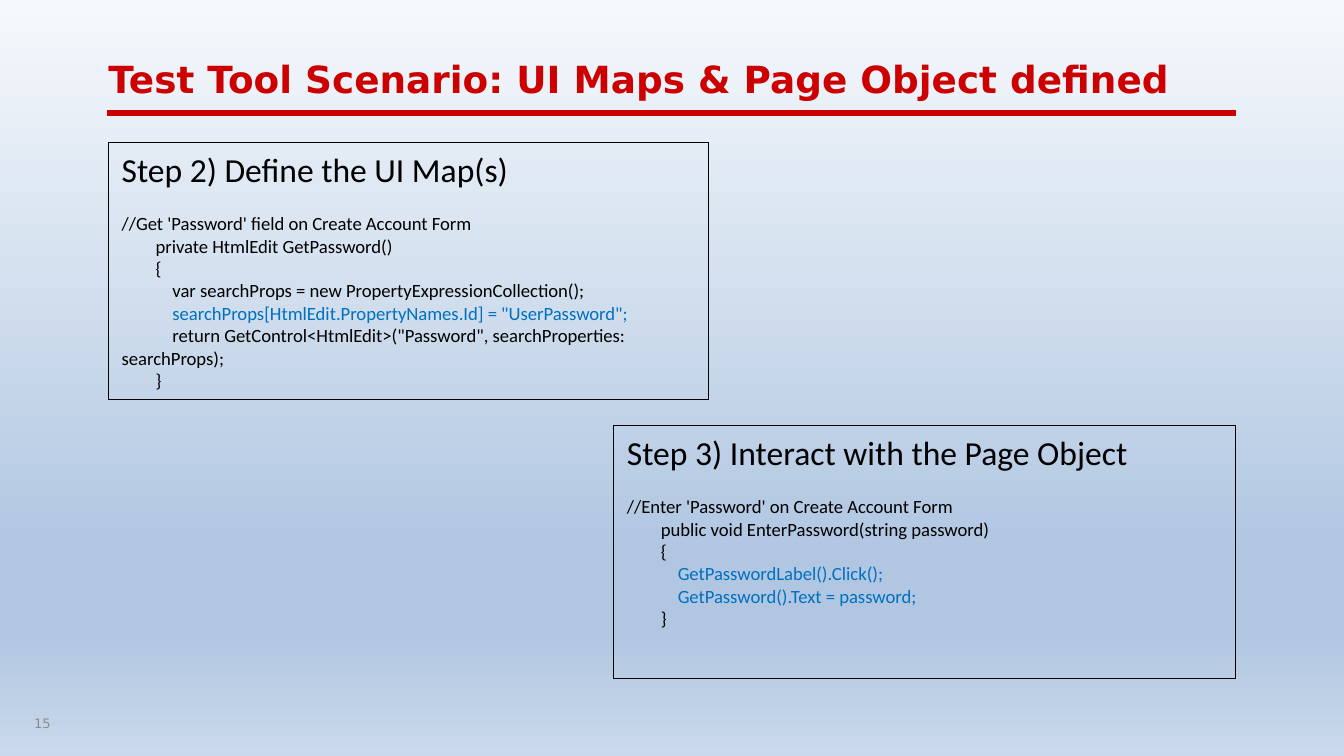
from dataclasses import dataclass

from lxml.etree import SubElement
from pptx import Presentation
from pptx.dml.color import RGBColor
from pptx.enum.shapes import MSO_CONNECTOR, MSO_SHAPE
from pptx.enum.text import MSO_ANCHOR, PP_ALIGN
from pptx.oxml.ns import qn
from pptx.util import Cm, Pt


@dataclass(frozen=True)
class Theme:
    red: str = "CC0000"
    black: str = "000000"
    blue: str = "0070C0"
    gray: str = "8C8C8C"
    stops: tuple = ((0, "F6F9FC"), (74, "B0C6E1"), (83, "B0C6E1"), (100, "CAD9EB"))
    sans: str = "DejaVu Sans"
    body: str = "Calibri"
    title: int = 20
    head: int = 18
    code: int = 10
    page: int = 7
    gap: float = 12.2
    tab: float = 0.32


THEME = Theme()

MAP = (
    (0, "//Get 'Password' field on Create Account Form", THEME.black),
    (2, "private HtmlEdit GetPassword()", THEME.black),
    (2, "{", THEME.black),
    (3, "var searchProps = new PropertyExpressionCollection();", THEME.black),
    (3, 'searchProps[HtmlEdit.PropertyNames.Id] = "UserPassword";', THEME.blue),
    (3, 'return GetControl<HtmlEdit>("Password", searchProperties: searchProps);', THEME.black),
    (2, "}", THEME.black),
)
PAGE = (
    (0, "//Enter 'Password' on Create Account Form", THEME.black),
    (2, "public void EnterPassword(string password)", THEME.black),
    (2, "{", THEME.black),
    (3, "GetPasswordLabel().Click();", THEME.blue),
    (3, "GetPassword().Text = password;", THEME.blue),
    (2, "}", THEME.black),
)


def tint(color, code):
    color.rgb = RGBColor.from_string(code)


def add_run(para, text, font, size, color, bold=False):
    run = para.add_run()
    run.text = text
    run.font.name = font
    run.font.size = Pt(size)
    run.font.bold = bold
    tint(run.font.color, color)


def add_back(slide):
    fill = slide.background.fill
    fill.gradient()
    fill.gradient_angle = 270
    stops = next(slide.element.iter(qn("a:gsLst")))
    for stop in list(stops):
        stops.remove(stop)
    for place, code in THEME.stops:
        stop = SubElement(stops, qn("a:gs"), pos=str(place * 1000))
        SubElement(stop, qn("a:srgbClr"), val=code)


def add_rule(slide, left, right, top):
    rule = slide.shapes.add_connector(
        MSO_CONNECTOR.STRAIGHT, Cm(left), Cm(top), Cm(right), Cm(top))
    tint(rule.line.color, THEME.red)
    rule.line.width = Pt(3)
    SubElement(rule.element.spPr, qn("a:effectLst"))


def add_label(slide, area, text, size, color, anchor, align, bold=False):
    frame = slide.shapes.add_textbox(*map(Cm, area)).text_frame
    frame.word_wrap = True
    frame.vertical_anchor = anchor
    frame.margin_left = frame.margin_right = 0
    frame.margin_top = frame.margin_bottom = 0
    para = frame.paragraphs[0]
    para.alignment = align
    add_run(para, text, THEME.sans, size, color, bold)


def add_step(slide, area, head, code):
    box = slide.shapes.add_shape(MSO_SHAPE.RECTANGLE, *map(Cm, area))
    box.shadow.inherit = False
    box.fill.background()
    tint(box.line.color, THEME.black)
    box.line.width = Pt(0.5)
    frame = box.text_frame
    frame.word_wrap = True
    frame.vertical_anchor = MSO_ANCHOR.TOP
    para = frame.paragraphs[0]
    para.alignment = PP_ALIGN.LEFT
    para.space_after = Pt(THEME.gap)
    add_run(para, head, THEME.body, THEME.head, THEME.black)
    for level, text, color in code:
        para = frame.add_paragraph()
        para.alignment = PP_ALIGN.LEFT
        props = para._p.get_or_add_pPr()
        props.set("marL", "0")
        props.set("indent", str(Cm(level * THEME.tab)))
        add_run(para, text, THEME.body, THEME.code, color)


def main():
    deck = Presentation()
    deck.slide_width, deck.slide_height = Cm(25.4), Cm(14.29)
    slide = deck.slides.add_slide(deck.slide_layouts[6])
    add_back(slide)
    add_rule(slide, 2.03, 23.35, 2.14)
    add_label(slide, (0.48, 13.41, 0.64, 0.53), "15", THEME.page, THEME.gray,
              MSO_ANCHOR.MIDDLE, PP_ALIGN.CENTER)
    add_label(slide, (2.05, 0.55, 21.31, 1.35),
              "Test Tool Scenario: UI Maps & Page Object defined",
              THEME.title, THEME.red, MSO_ANCHOR.BOTTOM, PP_ALIGN.LEFT, True)
    add_step(slide, (2.05, 2.69, 11.35, 4.87), "Step 2) Define the UI Map(s)", MAP)
    add_step(slide, (11.6, 8.04, 11.76, 4.78), "Step 3) Interact with the Page Object", PAGE)
    deck.save("out.pptx")


if __name__ == "__main__":
    main()
